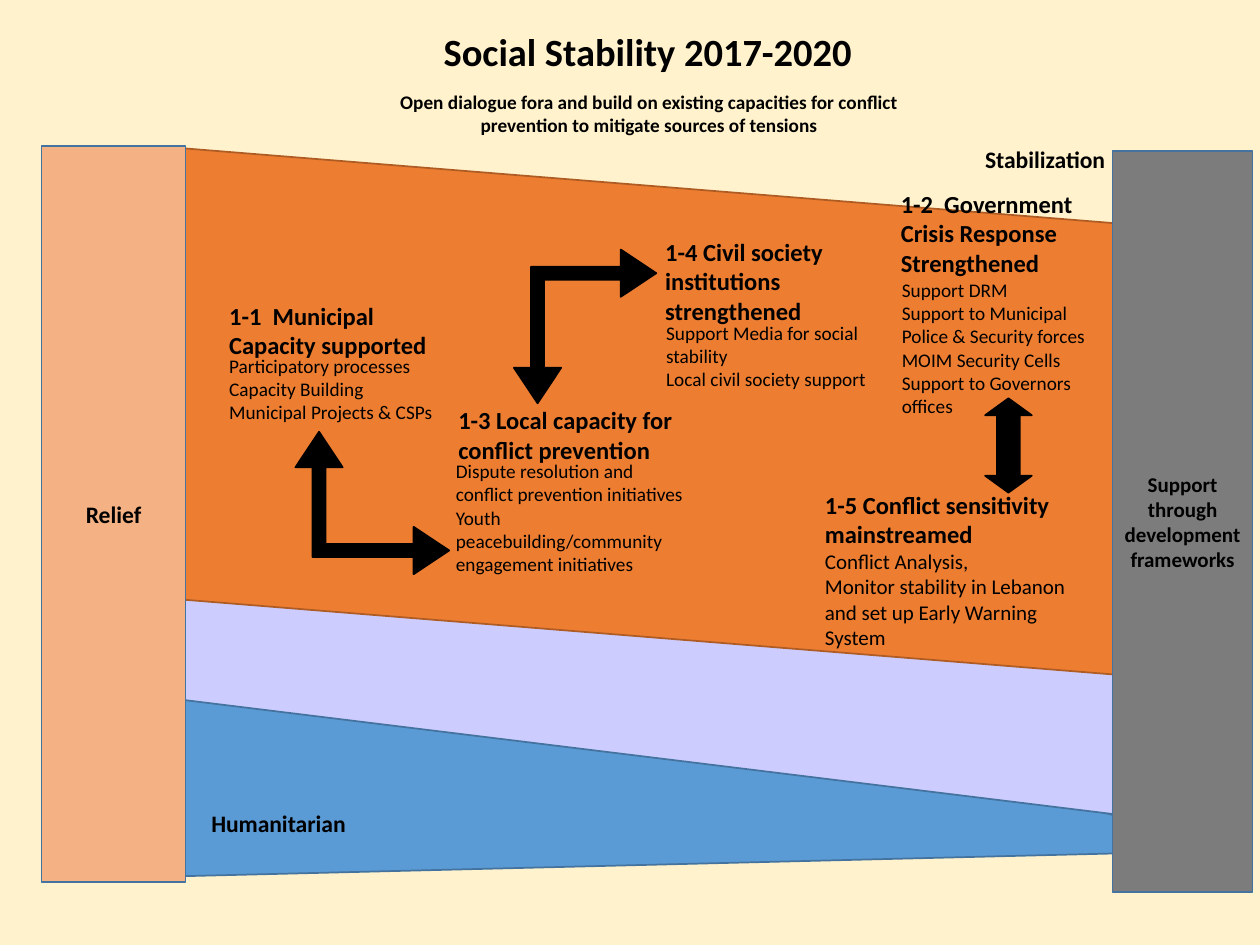
"""Build the Social Stability 2017-2020 slide."""
from dataclasses import dataclass
from typing import Optional

from pptx import Presentation
from pptx.dml.color import RGBColor
from pptx.enum.shapes import MSO_SHAPE
from pptx.enum.text import MSO_ANCHOR, MSO_AUTO_SIZE, PP_ALIGN
from pptx.util import Cm, Pt

RECT = MSO_SHAPE.RECTANGLE
TRIANGLE = MSO_SHAPE.ISOSCELES_TRIANGLE
SLANT = MSO_SHAPE.PARALLELOGRAM
CORNER = MSO_SHAPE.LEFT_UP_ARROW
DOUBLE = MSO_SHAPE.LEFT_RIGHT_ARROW
LEFT, CENTER = PP_ALIGN.LEFT, PP_ALIGN.CENTER
TOP, MIDDLE = MSO_ANCHOR.TOP, MSO_ANCHOR.MIDDLE
NO_FIT = MSO_AUTO_SIZE.NONE

CREAM = RGBColor(0xFF, 0xF2, 0xCC)
BLUE = RGBColor(0x5B, 0x9B, 0xD5)
NAVY = RGBColor(0x43, 0x73, 0x9E)
LAVENDER = RGBColor(0xCC, 0xCC, 0xFF)
ORANGE = RGBColor(0xED, 0x7D, 0x31)
RUST = RGBColor(0xAF, 0x5C, 0x24)
PEACH = RGBColor(0xF4, 0xB1, 0x83)
GRAY = RGBColor(0x7C, 0x7C, 0x7C)
BLACK = RGBColor(0, 0, 0)

FONT = "Calibri"
HEAD, ITEM, LABEL = 14, 11, 13.5
CORNER_ADJ = (0.091, 0.166, 0.25)


@dataclass(frozen=True)
class Box:
    left: float
    top: float
    width: float
    height: float

    def lengths(self) -> tuple:
        return Cm(self.left), Cm(self.top), Cm(self.width), Cm(self.height)


@dataclass(frozen=True)
class Figure:
    kind: int
    box: Box
    fill: RGBColor
    line: RGBColor
    rotation: float = 0
    adj: tuple = ()


@dataclass(frozen=True)
class Line:
    text: str
    size: float
    bold: bool = False


@dataclass(frozen=True)
class Pillar:
    box: Box
    fill: RGBColor
    label: Line


@dataclass(frozen=True)
class Output:
    heading: str
    head_box: Box
    items: tuple
    item_box: Optional[Box] = None
    item_size: float = ITEM


BANDS = (
    Figure(TRIANGLE, Box(11.1, 4.24, 6.22, 22.1), BLUE, NAVY, 93.7, (0.683,)),
    Figure(SLANT, Box(2.67, 10.39, 22.05, 4.93), LAVENDER, NAVY, 7),
    Figure(SLANT, Box(2.57, 3.76, 21.03, 9.07), ORANGE, RUST, 4.6, (0.065,)),
)
LABELS = (
    (Box(4.01, 16.18, 3.68, 0.84), Line("Humanitarian", LABEL, True)),
    (Box(19.61, 2.79, 3.45, 0.84), Line("Stabilization", LABEL, True)),
)
PILLARS = (
    Pillar(Box(0.84, 2.95, 2.9, 14.83), PEACH, Line("Relief", LABEL, True)),
    Pillar(Box(22.43, 3.05, 2.82, 14.94), GRAY,
           Line("Support through development frameworks", 12, True)),
)
OUTPUTS = (
    Output("1-1  Municipal Capacity supported", Box(4.37, 5.94, 4.7, 1.45),
           ("Participatory processes", "Capacity Building", "Municipal Projects & CSPs"),
           Box(4.37, 7.01, 4.67, 1.68)),
    Output("1-3 Local capacity for conflict prevention", Box(8.99, 8.05, 5.21, 1.45),
           ("Dispute resolution and conflict prevention initiatives",
            "Youth peacebuilding/community engagement initiatives"),
           Box(8.94, 9.14, 5.23, 2.62)),
    Output("1-4 Civil society institutions strengthened", Box(13.16, 4.65, 4.67, 2.06),
           ("Support Media for social stability", "Local civil society support"),
           Box(13.18, 6.35, 4.67, 1.68)),
    Output("1-2  Government Crisis Response Strengthened", Box(17.91, 3.68, 4.7, 2.49),
           ("Support DRM", "Support to Municipal Police & Security forces",
            "MOIM Security Cells", "Support to Governors offices"),
           Box(17.93, 5.49, 4.62, 3.73)),
    Output("1-5 Conflict sensitivity mainstreamed", Box(16.38, 9.75, 5.99, 3.51),
           ("Conflict Analysis,",
            "Monitor stability in Lebanon and set up Early Warning System"),
           item_size=12),
)
ARROWS = (
    Figure(CORNER, Box(6.07, 8.59, 2.87, 3.1), BLACK, BLACK, 90, CORNER_ADJ),
    Figure(CORNER, Box(10.36, 5.03, 2.87, 3.1), BLACK, BLACK, 180, CORNER_ADJ),
    Figure(DOUBLE, Box(19.38, 8.51, 1.9, 0.94), BLACK, BLACK, 270, (0.486, 0.362)),
)


def write(sp, lines: tuple, align=LEFT, anchor=TOP) -> None:
    tf = sp.text_frame
    tf.word_wrap = True
    tf.auto_size = NO_FIT
    tf.vertical_anchor = anchor
    for i, line in enumerate(lines):
        p = tf.add_paragraph() if i else tf.paragraphs[0]
        p.text = line.text
        p.alignment = align
        p.space_before = Pt(0)
        p.font.name = FONT
        p.font.size = Pt(line.size)
        p.font.bold = line.bold
        p.font.color.rgb = BLACK


def add_text(shapes, box: Box, lines: tuple) -> None:
    write(shapes.add_textbox(*box.lengths()), lines)


def fill_placeholder(sp, box: Box, line: Line, align) -> None:
    sp.left, sp.top, sp.width, sp.height = box.lengths()
    write(sp, (line,), align)


def add_figure(shapes, fig: Figure):
    sp = shapes.add_shape(fig.kind, *fig.box.lengths())
    sp.shadow.inherit = False
    sp.rotation = fig.rotation
    sp.fill.solid()
    sp.fill.fore_color.rgb = fig.fill
    sp.line.color.rgb = fig.line
    sp.line.width = Pt(1)
    for i, value in enumerate(fig.adj):
        sp.adjustments[i] = value
    return sp


def add_pillar(shapes, pillar: Pillar) -> None:
    sp = add_figure(shapes, Figure(RECT, pillar.box, pillar.fill, NAVY))
    tf = sp.text_frame
    tf.margin_left = tf.margin_right = Cm(0.18)
    tf.margin_top = tf.margin_bottom = Cm(0.1)
    write(sp, (pillar.label,), CENTER, MIDDLE)


def add_output(shapes, output: Output) -> None:
    heading = (Line(output.heading, HEAD, True),)
    items = tuple(Line(text, output.item_size) for text in output.items)
    if output.item_box is None:
        add_text(shapes, output.head_box, heading + items)
        return
    group = shapes.add_group_shape()
    add_text(group.shapes, output.head_box, heading)
    add_text(group.shapes, output.item_box, items)


def main() -> None:
    prs = Presentation()
    prs.slide_width, prs.slide_height = Cm(25.4), Cm(19.05)
    s = prs.slides.add_slide(prs.slide_layouts[0])
    s.background.fill.solid()
    s.background.fill.fore_color.rgb = CREAM

    fill_placeholder(s.shapes.title, Box(8.69, 0.43, 8.97, 1.24),
                     Line("Social Stability 2017-2020", 22, True), LEFT)
    fill_placeholder(s.placeholders[1], Box(7.47, 1.7, 11.23, 1.19),
                     Line("Open dialogue fora and build on existing capacities for conflict "
                          "prevention to mitigate sources of tensions", 11, True), CENTER)
    for band in BANDS:
        add_figure(s.shapes, band)
    for box, line in LABELS:
        add_text(s.shapes, box, (line,))
    for pillar in PILLARS:
        add_pillar(s.shapes, pillar)
    for output in OUTPUTS:
        add_output(s.shapes, output)
    for arrow in ARROWS:
        add_figure(s.shapes, arrow)
    prs.save("out.pptx")


if __name__ == "__main__":
    main()
